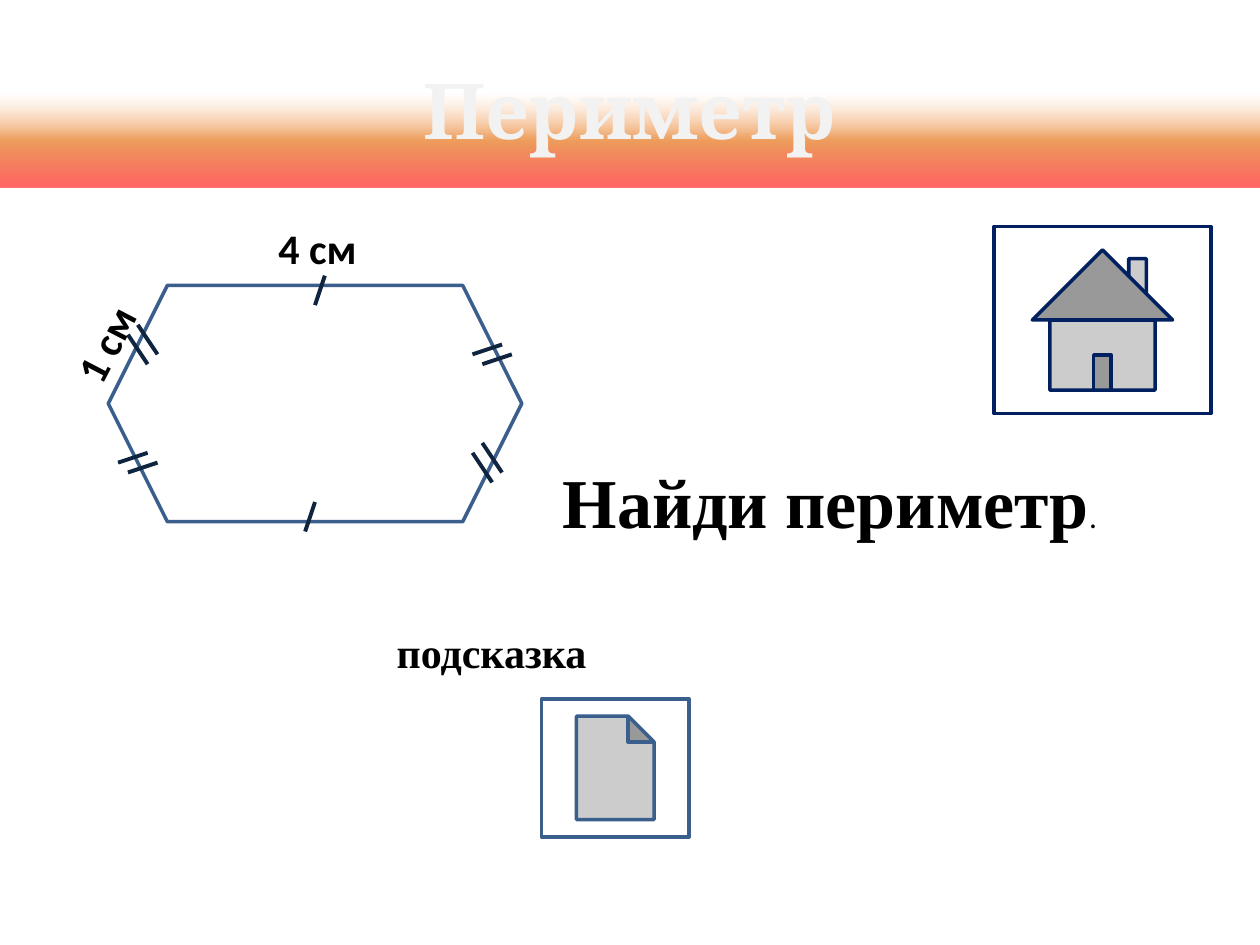
from lxml.etree import SubElement
from pptx import Presentation
from pptx.dml.color import RGBColor as RGB
from pptx.enum.shapes import MSO_CONNECTOR as Link, MSO_SHAPE as Kind
from pptx.enum.text import MSO_ANCHOR as Anchor, MSO_AUTO_SIZE as Fit, PP_ALIGN as Align
from pptx.oxml.ns import qn
from pptx.util import Pt

WHITE = RGB(0xFF, 0xFF, 0xFF)
BLACK = RGB(0, 0, 0)
PALE = RGB(0xF2, 0xF2, 0xF2)
BLUE = RGB(0x3A, 0x5F, 0x8C)
NAVY = RGB(0x00, 0x20, 0x60)
INK = RGB(0x0F, 0x24, 0x3E)
FADE = [
    (0, RGB(0xFD, 0xEA, 0xDA), 0),
    (40, RGB(0xFA, 0xC0, 0x90), 0),
    (70, RGB(0xE4, 0x6C, 0x0A), 67),
    (100, RGB(0xFF, 0, 0), 60),
]
STEP = 45 / 8


class Page:
    sans = "Calibri"
    serif = "Times New Roman"
    head = "Cambria"

    def __init__(self, deck):
        self.slide = deck.slides.add_slide(deck.slide_layouts[6])

    def style(self, run, font, size, color=BLACK, bold=True):
        run.font.name = font
        run.font.size = Pt(size)
        run.font.bold = bold
        run.font.color.rgb = color

    def shape(self, kind, box, line, width=2):
        item = self.slide.shapes.add_shape(kind, *map(Pt, box))
        item.shadow.inherit = False
        item.fill.solid()
        item.fill.fore_color.rgb = WHITE
        item.line.color.rgb = line
        item.line.width = Pt(width)
        return item

    def banner(self, text, box):
        item = self.shape(Kind.RECTANGLE, box, WHITE)
        item.line.fill.background()
        item.fill.gradient()
        grad = item.fill._xPr.find(qn("a:gradFill"))
        stops = grad.find(qn("a:gsLst"))
        for stop in list(stops):
            stops.remove(stop)
        for pos, color, alpha in FADE:
            stop = SubElement(stops, qn("a:gs"), pos=str(pos * 1000))
            tint = SubElement(stop, qn("a:srgbClr"), val=str(color))
            SubElement(tint, qn("a:alpha"), val=str(alpha * 1000))
        slant = grad.find(qn("a:lin"))
        slant.set("ang", "5400000")
        slant.set("scaled", "0")
        frame = item.text_frame
        frame.text = text
        frame.vertical_anchor = Anchor.MIDDLE
        para = frame.paragraphs[0]
        para.alignment = Align.CENTER
        self.style(para.runs[0], self.head, 44, PALE)

    def label(self, text, box, font, size=24, turn=0):
        item = self.slide.shapes.add_textbox(*map(Pt, box))
        item.rotation = turn
        frame = item.text_frame
        frame.word_wrap = True
        frame.auto_size = Fit.SHAPE_TO_FIT_TEXT
        frame.text = text
        para = frame.paragraphs[0]
        self.style(para.runs[0], font, size)
        return para

    def tick(self, col, row, wide, high):
        ends = (col, row, col + wide, row + high)
        line = self.slide.shapes.add_connector(
            Link.STRAIGHT, *(Pt(end * STEP) for end in ends))
        line.line.color.rgb = INK
        line.line.width = Pt(2.25)
        SubElement(line._element.spPr, qn("a:effectLst"))


def main():
    deck = Presentation()
    deck.slide_width, deck.slide_height = Pt(720), Pt(540)
    page = Page(deck)

    page.banner("Периметр", (0, 16.9, 720, 90))
    page.shape(Kind.HEXAGON, (61.9, 163.1, 236.3, 135), BLUE)
    page.label("4 см", (152, 123.8, 90, 36), page.sans)

    for col, row in ((33, 28), (32, 51)):
        page.tick(col, row, -1, 3)
    for col, row in ((13, 34), (48, 46)):
        for i in range(2):
            page.tick(col + i, row - i, 2, 3)
    for col, row in ((12, 47), (48, 36)):
        for i in range(2):
            page.tick(col + i, row + i, 3, -1)

    page.label("1 см", (28.8, 175.7, 65.5, 36), page.sans, turn=297.4)
    task = page.label("Найди периметр", (314.6, 258.5, 322.6, 55.4), page.serif, 40)
    dot = task.add_run()
    dot.text = "."
    page.style(dot, page.sans, 18, bold=False)

    page.shape(Kind.ACTION_BUTTON_DOCUMENT, (309.4, 399.4, 84.4, 78.8), BLUE)
    page.label("подсказка", (219.6, 354.4, 129.6, 36), page.serif)
    page.shape(Kind.ACTION_BUTTON_HOME, (568.1, 129.4, 123.8, 106.9), NAVY)

    deck.save("out.pptx")


if __name__ == "__main__":
    main()
